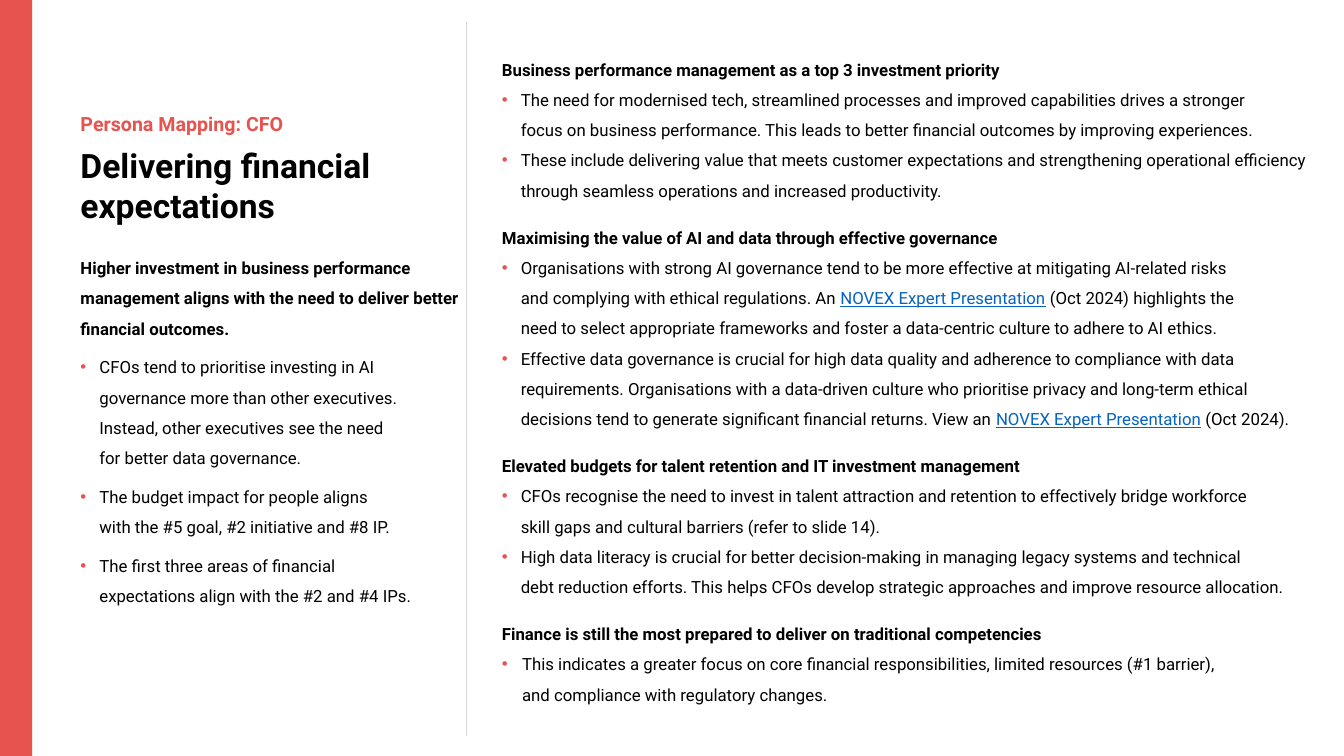
from lxml import etree
from pptx import Presentation
from pptx.dml.color import RGBColor
from pptx.enum.shapes import MSO_CONNECTOR, MSO_SHAPE
from pptx.enum.text import MSO_AUTO_SIZE
from pptx.oxml.ns import qn
from pptx.util import Pt

RECTANGLE = MSO_SHAPE.RECTANGLE
STRAIGHT = MSO_CONNECTOR.STRAIGHT
FIT_SHAPE = MSO_AUTO_SIZE.SHAPE_TO_FIT_TEXT

COLORS = {"accent": "E7534F", "text": "000000", "link": "0563C1", "rule": "D9D9D9"}
INDENT = 13.5


def add_frame(left, top, width, height):
    frame = slide.shapes.add_textbox(Pt(left), Pt(top), Pt(width), Pt(height)).text_frame
    frame.word_wrap = True
    frame.auto_size = FIT_SHAPE
    return frame


def write(frame, text, size=12, bold=False, color="text", indent=0, spacing=1.5, after=0):
    paragraph = frame.add_paragraph() if frame.text else frame.paragraphs[0]
    if indent:
        props = paragraph._p.get_or_add_pPr()
        props.set("marL", str(Pt(indent)))
        props.set("indent", str(-Pt(indent)))
        bullet_color = etree.SubElement(props, qn("a:buClr"))
        etree.SubElement(bullet_color, qn("a:srgbClr"), val=COLORS["accent"])
        etree.SubElement(props, qn("a:buFont"), typeface="Arial")
        etree.SubElement(props, qn("a:buChar"), char="•")
    paragraph.line_spacing = spacing
    paragraph.space_after = Pt(after)
    for part, segment in enumerate(text.split("|")):
        linked = part % 2 == 1
        for number, line in enumerate(segment.split("\n")):
            if number:
                paragraph.add_line_break()
            run = paragraph.add_run()
            run.text = line
            run.font.name = "Roboto"
            run.font.size = Pt(size)
            run.font.bold = bold
            run.font.underline = linked
            run.font.color.rgb = RGBColor.from_string(COLORS["link" if linked else color])


deck = Presentation()
deck.slide_width, deck.slide_height = Pt(960), Pt(540)
slide = deck.slides.add_slide(deck.slide_layouts[6])

side_bar = slide.shapes.add_shape(RECTANGLE, 0, 0, Pt(23), Pt(540))
side_bar.shadow.inherit = False
side_bar.fill.solid()
side_bar.fill.fore_color.rgb = RGBColor.from_string(COLORS["accent"])
side_bar.line.fill.background()

summary = add_frame(50.4, 173.5, 296.6, 291)
write(summary, "Higher investment in business performance management aligns with "
      "the need to deliver better financial outcomes.", bold=True, after=6)
for point in (
    "CFOs tend to prioritise investing in AI\ngovernance more than other executives.\n"
    "Instead, other executives see the need\nfor better data governance.",
    "The budget impact for people aligns\nwith the #5 goal, #2 initiative and #8 IP.",
    "The first three areas of financial\nexpectations align with the #2 and #4 IPs.",
):
    write(summary, point, indent=INDENT, after=6)

headline = add_frame(50.4, 100, 296.6, 65.5)
write(headline, "Delivering financial expectations", size=24, bold=True, spacing=1)

persona = add_frame(50.4, 76.3, 325.4, 24.5)
write(persona, "Persona Mapping: CFO", size=14, bold=True, color="accent", spacing=1)

divider = slide.shapes.add_connector(STRAIGHT, Pt(333.4), Pt(525.6), Pt(333.4), Pt(15.8))
divider.line.color.rgb = RGBColor.from_string(COLORS["rule"])
divider.line.width = Pt(0.5)
etree.SubElement(divider._element.spPr, qn("a:effectLst"))

findings = [
    ("Business performance management as a top 3 investment priority", INDENT, [
        "The need for modernised tech, streamlined processes and improved capabilities "
        "drives a stronger\nfocus on business performance. This leads to better financial "
        "outcomes by improving experiences.",
        "These include delivering value that meets customer expectations and strengthening "
        "operational efficiency through seamless operations and increased productivity.",
    ]),
    ("Maximising the value of AI and data through effective governance", INDENT, [
        "Organisations with strong AI governance tend to be more effective at mitigating "
        "AI-related risks\nand complying with ethical regulations. An |NOVEX Expert "
        "Presentation| (Oct 2024) highlights the\nneed to select appropriate frameworks and "
        "foster a data-centric culture to adhere to AI ethics.",
        "Effective data governance is crucial for high data quality and adherence to "
        "compliance with data requirements. Organisations with a data-driven culture who "
        "prioritise privacy and long-term ethical decisions tend to generate significant "
        "financial returns. View an |NOVEX Expert Presentation| (Oct 2024).",
    ]),
    ("Elevated budgets for talent retention and IT investment management", INDENT, [
        "CFOs recognise the need to invest in talent attraction and retention to effectively "
        "bridge workforce\nskill gaps and cultural barriers (refer to slide 14).",
        "High data literacy is crucial for better decision-making in managing legacy systems "
        "and technical\ndebt reduction efforts. This helps CFOs develop strategic approaches "
        "and improve resource allocation.",
    ]),
    ("Finance is still the most prepared to deliver on traditional competencies", 14.4, [
        "This indicates a greater focus on core financial responsibilities, limited "
        "resources (#1 barrier),\nand compliance with regulatory changes.",
    ]),
]
details = add_frame(351.4, 31.7, 589.7, 477.4)
for heading, indent, points in findings:
    write(details, heading, bold=True)
    for point in points:
        write(details, point, indent=indent, after=12 if point == points[-1] else 0)

deck.save("out.pptx")
